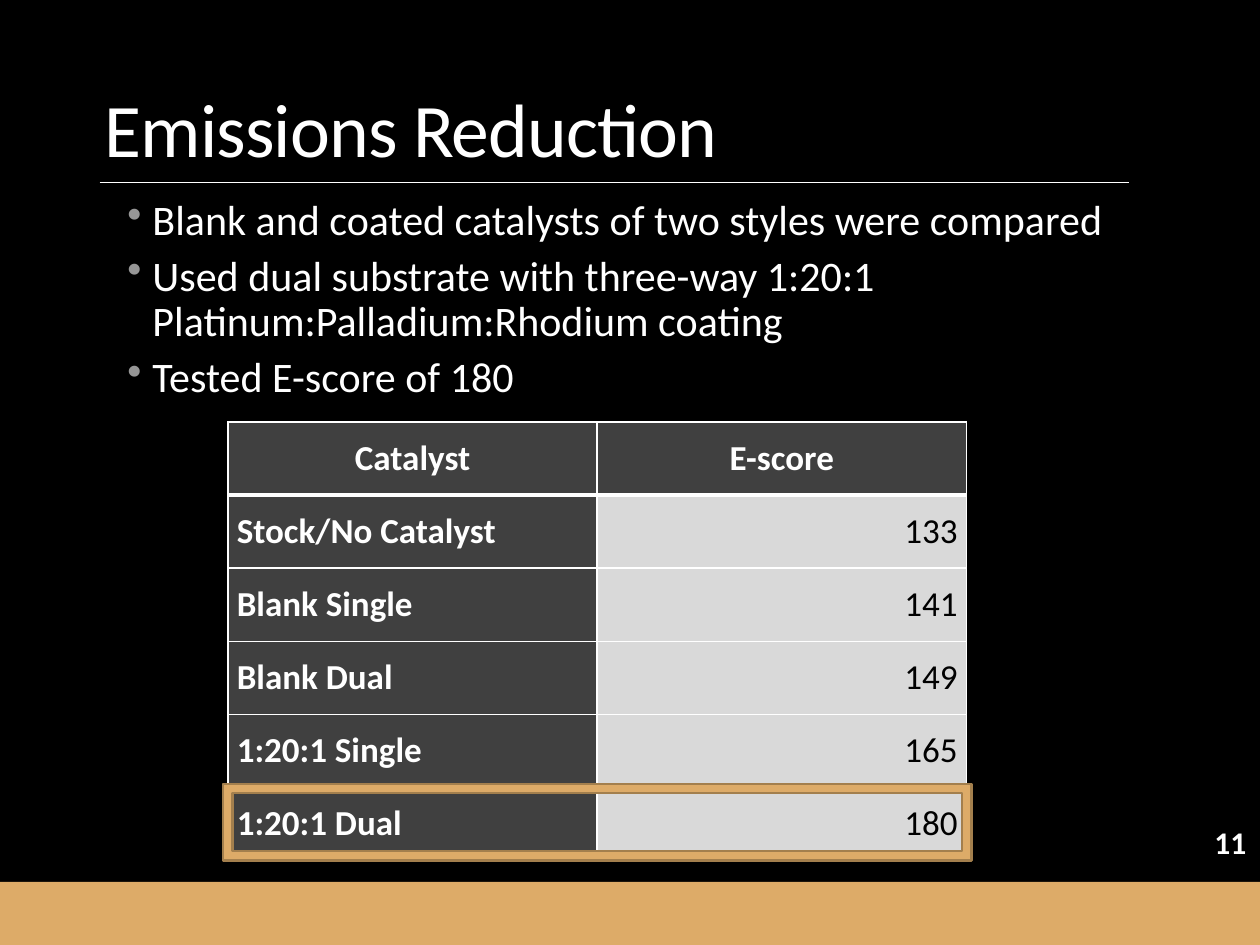
from pptx import Presentation
from pptx.dml.color import RGBColor
from pptx.enum.shapes import MSO_CONNECTOR, MSO_SHAPE
from pptx.enum.text import MSO_ANCHOR, MSO_AUTO_SIZE, PP_ALIGN
from pptx.oxml import parse_xml
from pptx.oxml.ns import nsdecls
from pptx.util import Inches, Pt

FONT = "Calibri"
WHITE, BLACK, GOLD = "FFFFFF", "000000", "DDAB68"
DARK, LIGHT = "404040", "D9D9D9"

BULLETS = [
    "Blank and coated catalysts of two styles were compared",
    "Used dual substrate with three-way 1:20:1 Platinum:Palladium:Rhodium coating",
    "Tested E-score of 180",
]
SCORES = [
    ("Catalyst", "E-score"),
    ("Stock/No Catalyst", "133"),
    ("Blank Single", "141"),
    ("Blank Dual", "149"),
    ("1:20:1 Single", "165"),
    ("1:20:1 Dual", "180"),
]


def rgb(color):
    return RGBColor.from_string(color)


def box(*lengths):
    return [Inches(v) for v in lengths]


def style(p, size, color, bold=False):
    for r in p.runs:
        r.font.name, r.font.size, r.font.bold = FONT, Pt(size), bold
        r.font.color.rgb = rgb(color)


def add_filled(slide, kind, area, fill, line=None):
    s = slide.shapes.add_shape(kind, *area)
    s.shadow.inherit = False
    s.fill.solid()
    s.fill.fore_color.rgb = rgb(fill)
    if line:
        s.line.color.rgb = rgb(line)
        s.line.width = Pt(1.25)
    else:
        s.line.fill.background()
    return s


def add_title(slide, area, text):
    s = slide.shapes.title
    s.left, s.top, s.width, s.height = area
    tf = s.text_frame
    tf.text = text
    tf.auto_size = MSO_AUTO_SIZE.NONE
    tf.vertical_anchor = MSO_ANCHOR.BOTTOM
    p = tf.paragraphs[0]
    p.alignment, p.line_spacing = PP_ALIGN.LEFT, 0.85
    style(p, 43.2, WHITE)
    p.runs[0].font._element.set("spc", "-50")


def add_rule(slide, x1, y, x2):
    s = slide.shapes.add_connector(MSO_CONNECTOR.STRAIGHT, x1, y, x2, y)
    s.line.color.rgb = rgb(WHITE)
    s.line.width = Pt(0.5)
    s._element.spPr.append(parse_xml(f"<a:effectLst {nsdecls('a')}/>"))


def add_bullets(slide, area, items):
    tf = slide.shapes.add_textbox(*area).text_frame
    tf.word_wrap = True
    tf.margin_left = tf.margin_right = 0
    for i, item in enumerate(items):
        p = tf.add_paragraph() if i else tf.paragraphs[0]
        p.text = item
        p.line_spacing = 0.9
        p.space_before, p.space_after = Pt(2 if i else 0), Pt(4)
        pPr = p._p.get_or_add_pPr()
        pPr.set("marL", str(Inches(0.42)))
        pPr.set("indent", str(Inches(-0.2)))
        pPr.append(parse_xml(f'<a:buClr {nsdecls("a")}><a:srgbClr val="969696"/></a:buClr>'))
        pPr.append(parse_xml(f'<a:buChar {nsdecls("a")} char="•"/>'))
        style(p, 24, WHITE)


def set_borders(cell, top, bottom):
    tcPr = cell._tc.get_or_add_tcPr()
    for side, width in zip("LRTB", (1, 1, top, bottom)):
        tcPr.append(parse_xml(
            f'<a:ln{side} {nsdecls("a")} w="{Pt(width)}"><a:solidFill>'
            f'<a:srgbClr val="{WHITE}"/></a:solidFill></a:ln{side}>'))


def add_score_table(slide, area, rows):
    table = slide.shapes.add_table(len(rows), len(rows[0]), *area).table
    for i, row in enumerate(rows):
        for j, text in enumerate(row):
            cell = table.cell(i, j)
            is_value = i > 0 and j > 0
            cell.text = text
            cell.vertical_anchor = MSO_ANCHOR.MIDDLE
            cell.margin_left = cell.margin_right = Inches(0.07)
            cell.margin_top = cell.margin_bottom = 0
            set_borders(cell, 3 if i == 1 else 1, 3 if i == 0 else 1)
            cell.fill.solid()
            cell.fill.fore_color.rgb = rgb(LIGHT if is_value else DARK)
            p = cell.text_frame.paragraphs[0]
            if i == 0:
                p.alignment = PP_ALIGN.CENTER
            else:
                p.alignment = PP_ALIGN.RIGHT if is_value else PP_ALIGN.LEFT
            style(p, 20, BLACK if is_value else WHITE, bold=not is_value)


def add_page_number(slide, area, number):
    tf = slide.shapes.add_textbox(*area).text_frame
    tf.word_wrap = True
    tf.vertical_anchor = MSO_ANCHOR.MIDDLE
    tf.text = number
    p = tf.paragraphs[0]
    p.alignment = PP_ALIGN.RIGHT
    style(p, 18, WHITE, bold=True)


def main():
    prs = Presentation()
    prs.slide_width, prs.slide_height = Inches(10), Inches(7.5)
    slide = prs.slides.add_slide(prs.slide_layouts[5])
    slide.background.fill.solid()
    slide.background.fill.fore_color.rgb = rgb(BLACK)

    # Footer band, heading and bullets
    add_filled(slide, MSO_SHAPE.RECTANGLE, box(0, 7, 10, 0.5), GOLD)
    add_rule(slide, *box(0.79, 1.45, 8.96))
    add_title(slide, box(0.73, 0.48, 8.25, 0.94), "Emissions Reduction")
    add_bullets(slide, box(0.79, 1.53, 8.32, 2.01), BULLETS)
    add_page_number(slide, box(8.88, 6.43, 1.11, 0.51), "11")

    # Scores, with the best row framed
    add_score_table(slide, box(1.81, 3.35, 5.86, 3.48), SCORES)
    add_filled(slide, MSO_SHAPE.FRAME, box(1.77, 6.22, 5.94, 0.61), GOLD, "A37F4D")

    prs.save("out.pptx")


if __name__ == "__main__":
    main()
